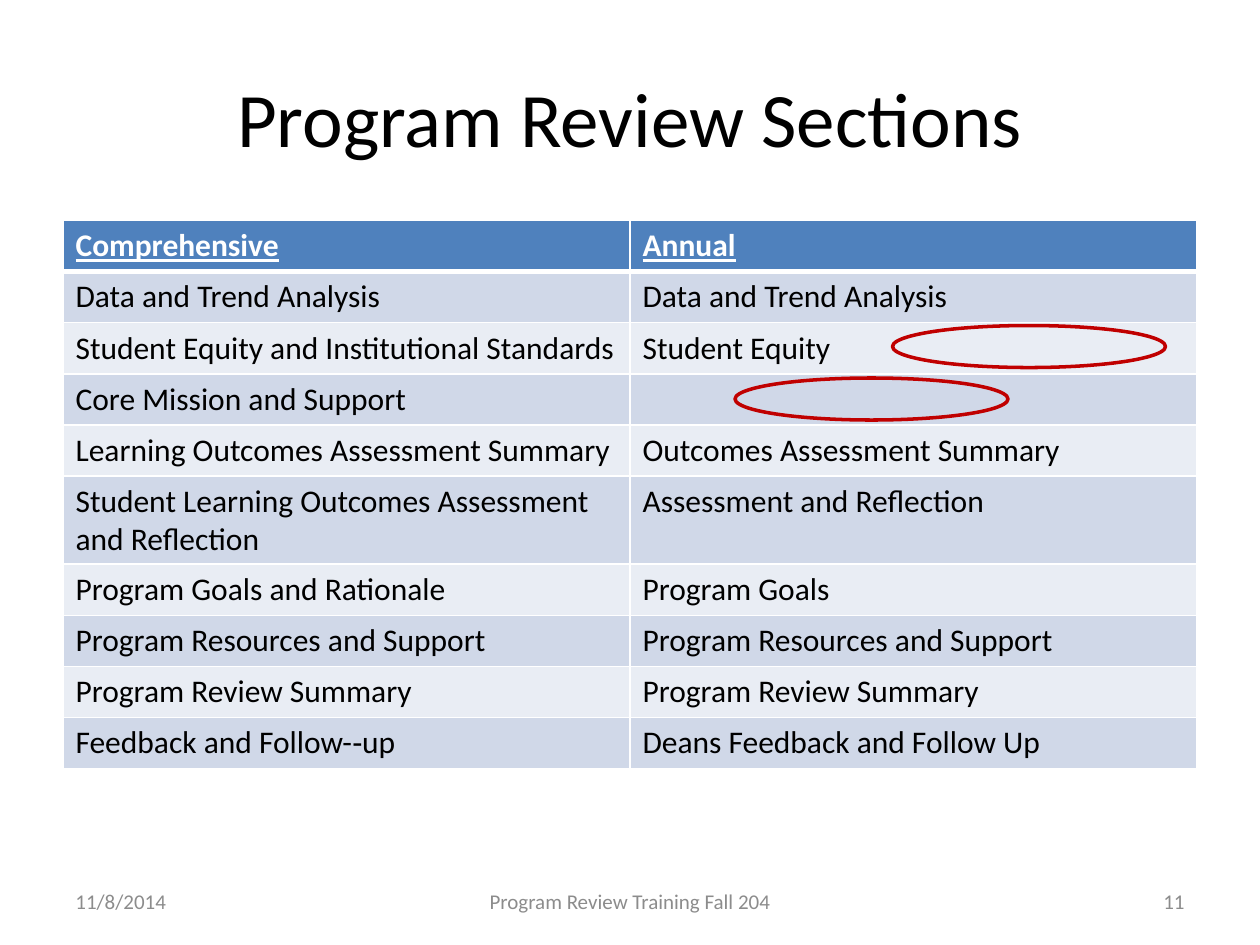
from lxml import etree
from pptx import Presentation
from pptx.dml.color import RGBColor
from pptx.enum.shapes import MSO_SHAPE
from pptx.enum.text import MSO_ANCHOR, PP_ALIGN
from pptx.oxml.ns import qn
from pptx.util import Pt

LEFT, CENTER, RIGHT = PP_ALIGN.LEFT, PP_ALIGN.CENTER, PP_ALIGN.RIGHT
MIDDLE = MSO_ANCHOR.MIDDLE
OVAL = MSO_SHAPE.OVAL

BLACK = RGBColor(0x00, 0x00, 0x00)
WHITE = RGBColor(0xFF, 0xFF, 0xFF)
GRAY = RGBColor(0x8C, 0x8C, 0x8C)
BLUE = RGBColor(0x4F, 0x81, 0xBD)
BANDS = (RGBColor(0xD0, 0xD8, 0xE8), RGBColor(0xE9, 0xED, 0xF4))
RED = RGBColor(0xC0, 0x00, 0x00)

SECTIONS = [
    ("Comprehensive", "Annual"),
    ("Data and Trend Analysis", "Data and Trend Analysis"),
    ("Student Equity and Institutional Standards", "Student Equity"),
    ("Core Mission and Support", ""),
    ("Learning Outcomes Assessment Summary", "Outcomes Assessment Summary"),
    ("Student Learning Outcomes Assessment and Reflection", "Assessment and Reflection"),
    ("Program Goals and Rationale", "Program Goals"),
    ("Program Resources and Support", "Program Resources and Support"),
    ("Program Review Summary", "Program Review Summary"),
    ("Feedback and Follow-‐up", "Deans Feedback and Follow Up"),
]


class SlideBuilder:
    """Draws styled elements on the current slide, with lengths in points."""

    font_name = "Calibri"

    def __init__(self, slide):
        self.slide = slide

    def style(self, paragraph, size, color, header=False):
        for span in paragraph.runs:
            span.font.name = self.font_name
            span.font.size = Pt(size)
            span.font.color.rgb = color
            span.font.bold = header
            span.font.underline = header

    def text(self, text, left, top, width, height, size, color, align):
        box = self.slide.shapes.add_textbox(Pt(left), Pt(top), Pt(width), Pt(height))
        frame = box.text_frame
        frame.word_wrap = True
        frame.vertical_anchor = MIDDLE
        frame.text = text
        para = frame.paragraphs[0]
        para.alignment = align
        self.style(para, size, color)

    def border(self, cell, bottom):
        properties = cell._tc.get_or_add_tcPr()
        widths = {"a:lnL": 1, "a:lnR": 1, "a:lnT": 1, "a:lnB": bottom}
        for index, (side, width) in enumerate(widths.items()):
            line = etree.Element(qn(side), w=str(Pt(width)))
            fill = etree.SubElement(line, qn("a:solidFill"))
            etree.SubElement(fill, qn("a:srgbClr"), val=str(WHITE))
            properties.insert(index, line)

    def table(self, rows, left, top, width, row_height):
        shape = self.slide.shapes.add_table(
            len(rows), len(rows[0]), Pt(left), Pt(top), Pt(width), Pt(row_height * len(rows)))
        table = shape.table
        for row_index, texts in enumerate(rows):
            header = row_index == 0
            table.rows[row_index].height = Pt(row_height)
            for column_index, text in enumerate(texts):
                cell = table.cell(row_index, column_index)
                cell.text = text
                cell.fill.solid()
                cell.fill.fore_color.rgb = BLUE if header else BANDS[(row_index - 1) % 2]
                self.style(cell.text_frame.paragraphs[0], 18, WHITE if header else BLACK, header)
                self.border(cell, 3 if header else 1)

    def ellipse(self, left, top, width, height):
        shape = self.slide.shapes.add_shape(OVAL, Pt(left), Pt(top), Pt(width), Pt(height))
        shape.shadow.inherit = False
        shape.fill.background()
        shape.line.color.rgb = RED
        shape.line.width = Pt(2)


def main():
    deck = Presentation()
    deck.slide_width, deck.slide_height = Pt(720), Pt(540)
    page = SlideBuilder(deck.slides.add_slide(deck.slide_layouts[6]))
    page.text("Program Review Sections", 36, 21.6, 648, 90, 44, BLACK, CENTER)
    footers = [
        ("11/8/2014", 36, 168, LEFT),
        ("Program Review Training Fall 204", 246, 228, CENTER),
        ("11", 516, 168, RIGHT),
    ]
    for text, left, width, align in footers:
        page.text(text, left, 500.5, width, 28.75, 12, GRAY, align)
    page.table(SECTIONS, 36, 126, 648, 29.2)
    for left, top in ((510, 186), (420, 216)):
        page.ellipse(left, top, 156, 24)
    deck.save("out.pptx")


if __name__ == "__main__":
    main()
